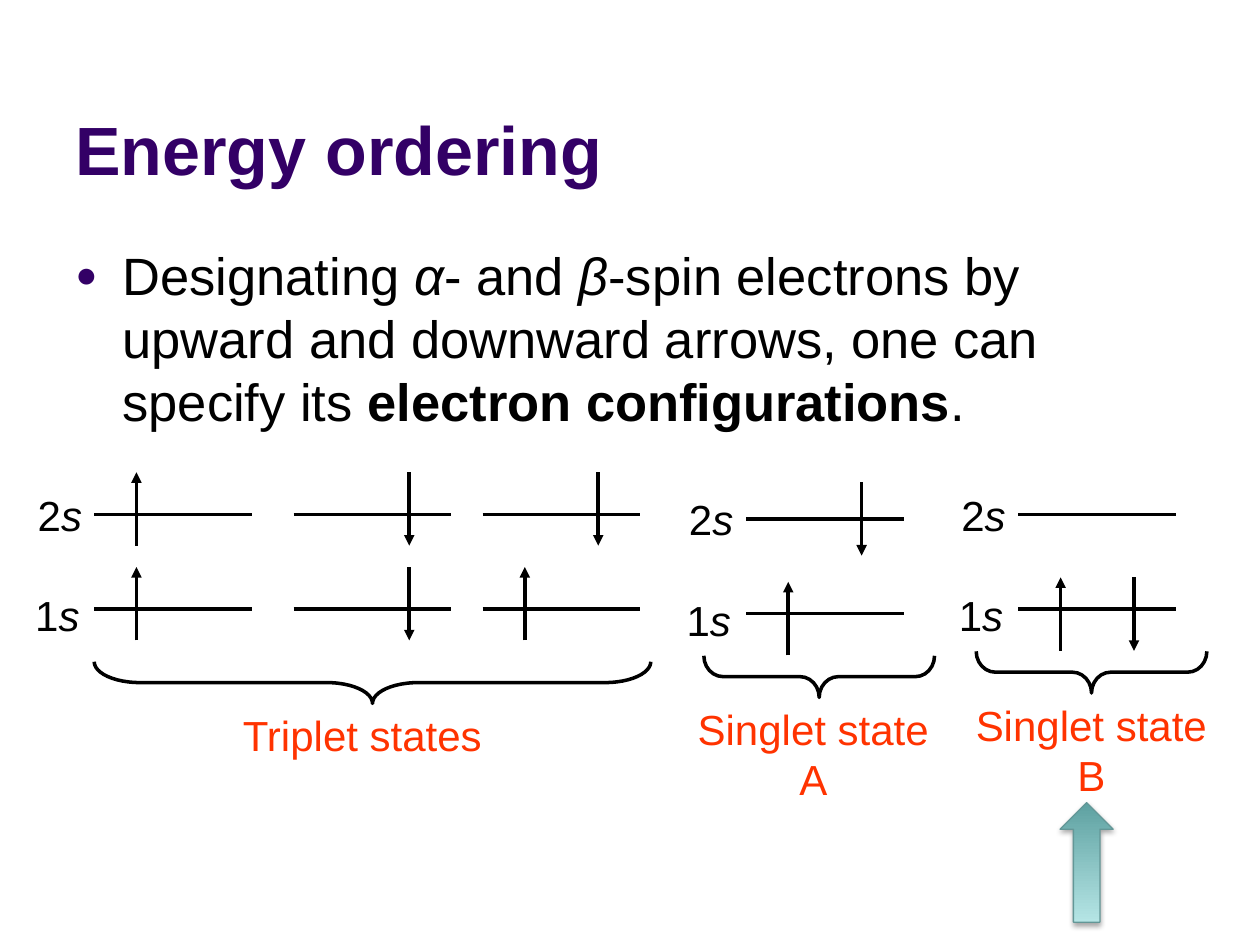
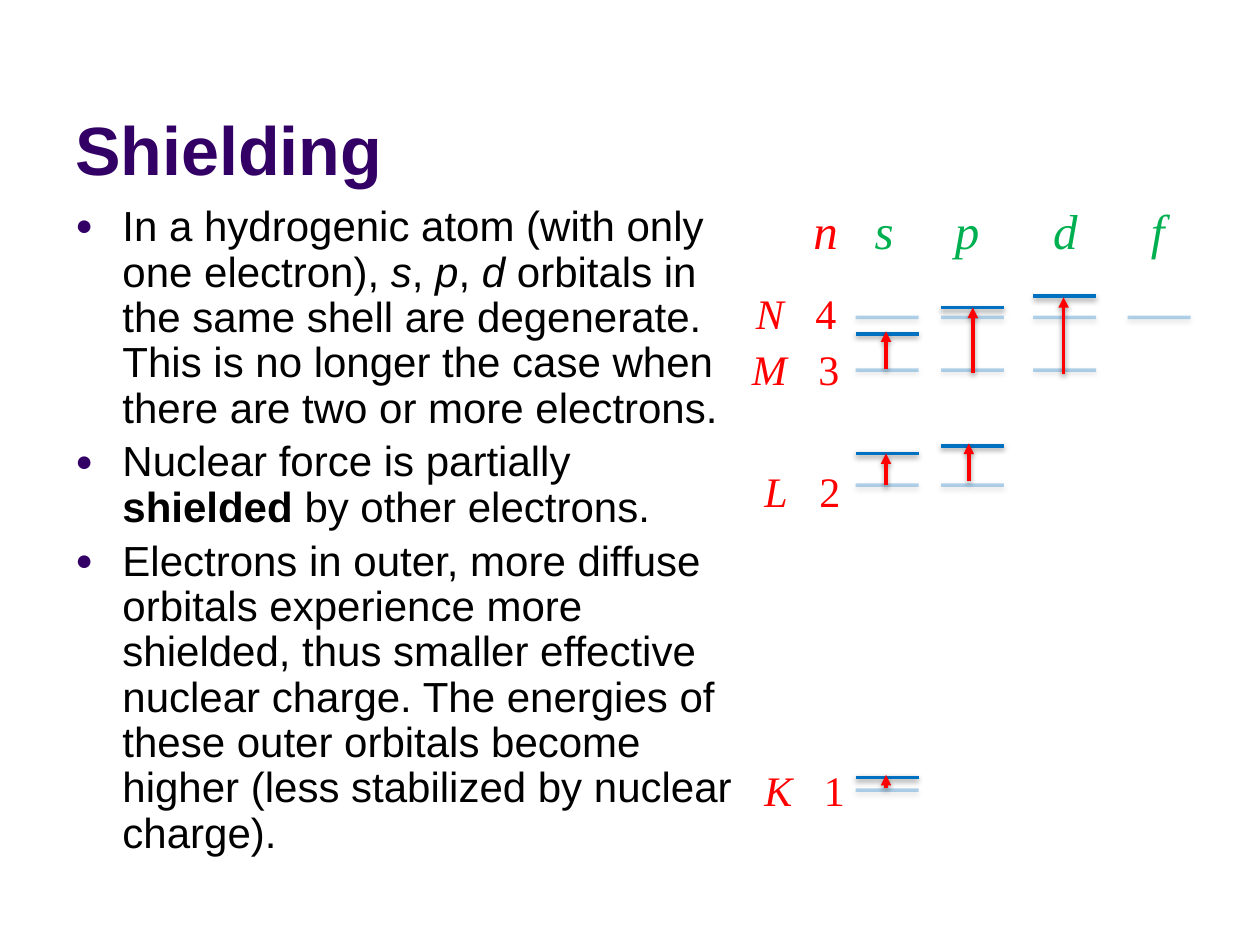
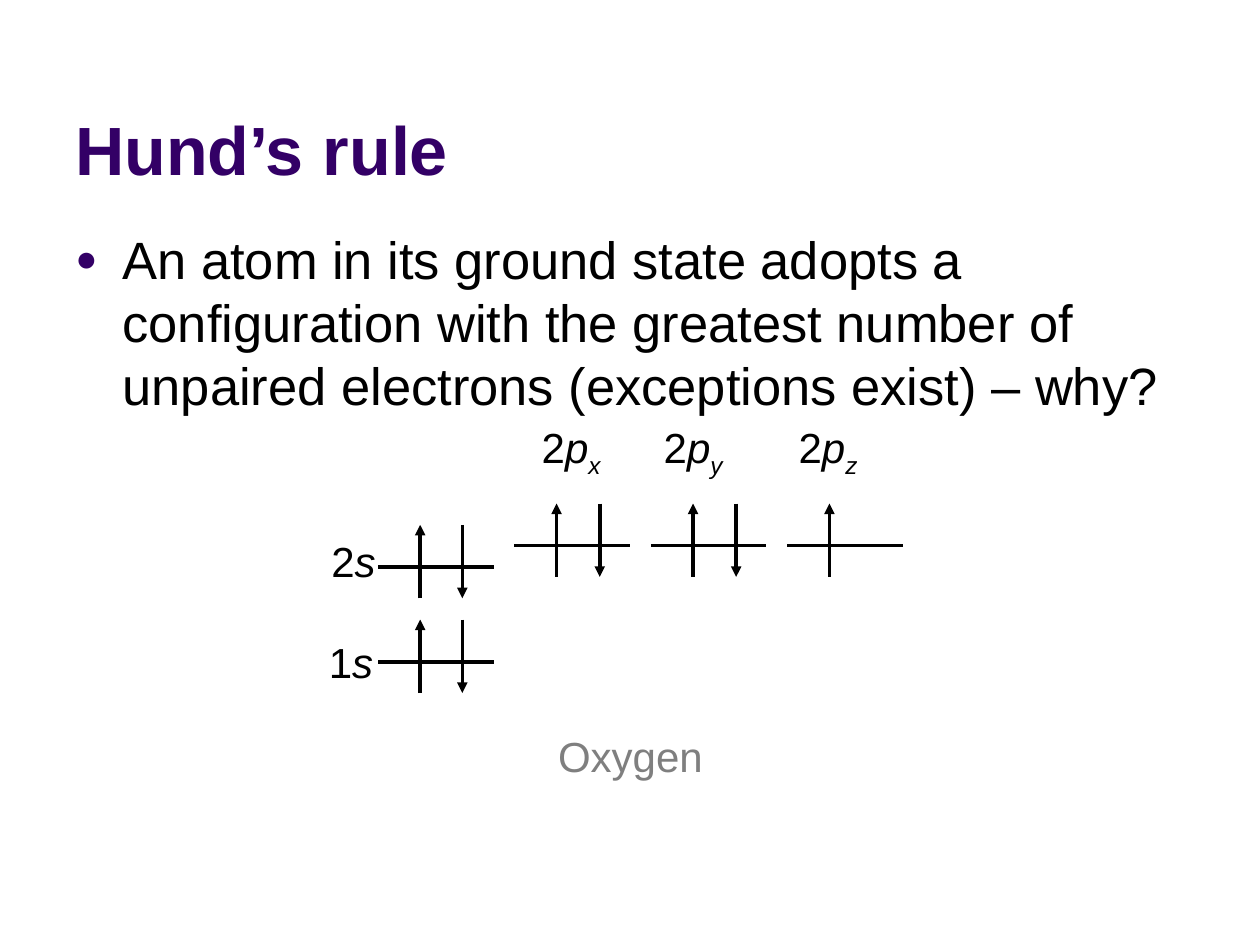
from lxml import etree
from pptx import Presentation
from pptx.dml.color import RGBColor
from pptx.enum import shapes as kinds, text as texts
from pptx.oxml import ns
from pptx.util import Cm, Pt

PURPLE = RGBColor(0x33, 0x00, 0x66)
BLACK = RGBColor(0x00, 0x00, 0x00)
ORANGE = RGBColor(0xFF, 0x33, 0x00)
RED = RGBColor(0xFF, 0x00, 0x00)
GREEN = RGBColor(0x00, 0xB0, 0x50)
BLUE = RGBColor(0x00, 0x70, 0xC0)
GRAY = RGBColor(0x7F, 0x7F, 0x7F)
TEAL = RGBColor(0x5E, 0xA1, 0xA1)
PALE_TEAL = RGBColor(0xB5, 0xE5, 0xE5)
TEAL_EDGE = RGBColor(0x63, 0x97, 0x97)
SANS = "Arial"
SERIF = "Times New Roman"

SPIN_LENGTH = 1.48
UP_OFFSET = 0.85
LEVEL_LENGTH = 3.18
SHELL_Y = {"2s": 10.37, "1s": 12.28}
COLUMNS = {"s": 17.25, "p": 18.97, "d": 20.83, "f": 22.73}


def add_xml(parent, tag, **attributes):
    return etree.SubElement(parent, ns.qn(tag), attributes)


def set_shadow(shape, alpha=None, distance=1.6):
    properties = shape.element.spPr
    for old in properties.findall(ns.qn("a:effectLst")):
        properties.remove(old)
    effects = add_xml(properties, "a:effectLst")
    if alpha:
        shadow = add_xml(effects, "a:outerShdw", blurRad=str(Pt(3.1)),
                         dist=str(Pt(distance)), dir="5400000", rotWithShape="0")
        color = add_xml(shadow, "a:srgbClr", val=str(BLACK))
        add_xml(color, "a:alpha", val=str(alpha * 1000))


def add_line(shapes, start, end, color=BLACK, arrow=False, shadow=None, opacity=None):
    line = shapes.add_connector(kinds.MSO_CONNECTOR.STRAIGHT,
                                *(Cm(value) for value in start + end))
    line.line.color.rgb = color
    line.line.width = Pt(2)
    outline = line.element.spPr.find(ns.qn("a:ln"))
    if opacity:
        add_xml(outline.find(".//" + ns.qn("a:srgbClr")), "a:alpha", val=str(opacity * 1000))
    if arrow:
        add_xml(outline, "a:tailEnd", type="triangle")
    set_shadow(line, shadow)


def add_box(page, left, top, width, height, wrap=True):
    box = page.shapes.add_textbox(Cm(left), Cm(top), Cm(width), Cm(height))
    box.text_frame.word_wrap = wrap
    return box.text_frame


def add_runs(para, runs, size, color=BLACK, font=SANS):
    for text, style in runs:
        span = para.add_run()
        span.text = text
        span.font.name = font
        span.font.size = Pt(size)
        span.font.color.rgb = color
        span.font.bold = "b" in style
        span.font.italic = "i" in style
        if "_" in style:
            span.font._element.set("baseline", "-25000")


def add_title(page, text):
    frame = add_box(page, 1.27, 0.33, 22.86, 3.61)
    frame.vertical_anchor = texts.MSO_ANCHOR.BOTTOM
    add_runs(frame.paragraphs[0], [(text, "b")], 39, PURPLE)


def add_bullets(page, top, width, height, items, size=30, spacing=None):
    frame = add_box(page, 1.27, top, width, height)
    for index, runs in enumerate(items):
        para = frame.add_paragraph() if index else frame.paragraphs[0]
        para.line_spacing = spacing
        para.space_before = Pt(size * 0.2)
        properties = para._p.get_or_add_pPr()
        properties.set("marL", str(Cm(0.95)))
        properties.set("indent", str(Cm(-0.95)))
        add_xml(add_xml(properties, "a:buClr"), "a:srgbClr", val=str(PURPLE))
        add_xml(properties, "a:buSzPct", val="70000")
        add_xml(properties, "a:buFont", typeface=SANS)
        add_xml(properties, "a:buChar", char="●")
        add_runs(para, runs, size)


def add_label(page, left, top, width, runs, color=BLACK):
    frame = add_box(page, left, top, width, 1.27, wrap=False)
    add_runs(frame.paragraphs[0], runs, 24, color)


def add_tabbed_label(page, left, top, width, stops, groups, size):
    frame = add_box(page, left, top, width, 1.27)
    para = frame.paragraphs[0]
    tabs = add_xml(para._p.get_or_add_pPr(), "a:tabLst")
    for stop in stops:
        add_xml(tabs, "a:tab", pos=str(Cm(stop)), algn="l")
    for runs, color in groups:
        add_runs(para, runs, size, color, SERIF)


def add_caption(page, left, top, width, lines):
    frame = add_box(page, left, top, width, 1.27 * len(lines))
    for index, text in enumerate(lines):
        para = frame.add_paragraph() if index else frame.paragraphs[0]
        para.alignment = texts.PP_ALIGN.CENTER
        add_runs(para, [(text, "")], 24, ORANGE)


def add_shell_labels(page, left, top):
    add_label(page, left, top, 1.4, [("1", ""), ("s", "i")])
    add_label(page, left + 0.05, top - 2.02, 1.4, [("2", ""), ("s", "i")])


def add_level(page, left, y, spins, length=LEVEL_LENGTH, down_offset=2.33, rise=0.85):
    add_line(page.shapes, (left, y), (left + length, y))
    top, bottom = y - rise, y - rise + SPIN_LENGTH
    if "↑" in spins:
        x = left + UP_OFFSET
        add_line(page.shapes, (x, bottom), (x, top), arrow=True)
    if "↓" in spins:
        x = left + down_offset
        add_line(page.shapes, (x, top), (x, bottom), arrow=True)


def add_brace(page, left, top, width, curl):
    depth = 0.84
    brace = page.shapes.add_shape(
        kinds.MSO_SHAPE.LEFT_BRACE, Cm(left + (width - depth) / 2),
        Cm(top + (depth - width) / 2), Cm(depth), Cm(width))
    brace.rotation = 270
    brace.adjustments[0] = curl
    brace.adjustments[1] = 0.5
    brace.fill.background()
    brace.line.color.rgb = BLACK
    brace.line.width = Pt(2)
    brace.shadow.inherit = False


def add_pointer(page):
    pointer = page.shapes.add_shape(kinds.MSO_SHAPE.DOWN_ARROW,
                                    Cm(21.37), Cm(16.18), Cm(1.07), Cm(2.41))
    pointer.rotation = 180
    pointer.fill.gradient()
    pointer.fill.gradient_angle = 90
    for stop, color in zip(pointer.fill.gradient_stops, (TEAL, PALE_TEAL)):
        stop.color.rgb = color
    pointer.line.color.rgb = TEAL_EDGE
    pointer.line.width = Pt(0.75)
    set_shadow(pointer, 35, 1.8)


def build_energy_ordering(page):
    add_title(page, "Energy ordering")
    add_bullets(page, 4.78, 22.86, 12.24, [[
        ("Designating ", ""), ("α", "i"), ("- and ", ""), ("β", "i"),
        ("-spin electrons by upward and downward arrows, one can specify its ", ""),
        ("electron configurations", "b"), (".", "")]])
    for left, upper, lower in ((1.9, "↑", "↑"), (5.92, "↓", "↓"), (9.73, "↓", "↑")):
        add_level(page, left, SHELL_Y["2s"], upper)
        add_level(page, left, SHELL_Y["1s"], lower)
    add_shell_labels(page, 0.46, 11.76)
    add_brace(page, 1.9, 13.34, 11.22, 1.1)
    add_caption(page, 3.81, 14.17, 6.99, ["Triplet states"])

    for left, drop, upper, lower in ((20.53, 0, "", "↑↓"), (15.04, 0.09, "↓", "↑")):
        add_level(page, left, SHELL_Y["2s"] + drop, upper, rise=0.74)
        add_level(page, left, SHELL_Y["1s"] + drop, lower, rise=0.64)
        add_shell_labels(page, left - 1.45, 11.76 + drop)
        add_brace(page, left - 0.85, 13.13 + drop, 4.65, 0.46)
    add_caption(page, 19.05, 13.97, 5.9, ["Singlet state B"])
    add_caption(page, 12.9, 14.05, 6.99, ["Singlet state", "A"])
    add_pointer(page)


def build_shielding(page):
    degenerate = page.shapes.add_group_shape().shapes
    for y, orbitals in ((6.4, "spdf"), (7.46, "spd"), (9.78, "sp"), (15.93, "s")):
        for orbital in orbitals:
            x = COLUMNS[orbital]
            add_line(degenerate, (x, y), (x + 1.27, y), BLUE, shadow=38, opacity=30)
    add_bullets(page, 4.02, 14.1, 13.54, [
        [("In a hydrogenic atom (with only one electron), ", ""), ("s", "i"), (", ", ""),
         ("p", "i"), (", ", ""), ("d", "i"),
         (" orbitals in the same shell are degenerate. This is no longer the case when "
          "there are two or more electrons.", "")],
        [("Nuclear force is partially ", ""), ("shielded ", "b"),
         ("by other electrons.", "")],
        [("Electrons in outer, more diffuse orbitals experience more shielded, thus "
          "smaller effective nuclear charge. The energies of these outer orbitals become "
          "higher (less stabilized by nuclear charge).", "")],
    ], size=24, spacing=0.9)
    add_title(page, "Shielding")
    add_tabbed_label(page, 16.15, 3.92, 8, (1.23, 2.85, 4.83, 6.8),
                     [([("n", "i")], RED), ([("\ts\tp\td\tf", "i")], GREEN)], 28)
    for orbital, y in (("d", 5.97), ("s", 6.73), ("p", 6.2),
                       ("s", 9.14), ("p", 8.99), ("s", 15.67)):
        x = COLUMNS[orbital]
        add_line(page.shapes, (x, y), (x + 1.27, y), BLUE, shadow=38)
    for x, bottom, top in ((17.86, 15.88, 15.62), (17.86, 9.78, 9.14),
                           (17.86, 7.44, 6.68), (19.53, 9.7, 8.94),
                           (19.61, 7.52, 6.2), (21.44, 7.54, 5.99)):
        add_line(page.shapes, (x, bottom), (x, top), RED, arrow=True, shadow=38)
    for shell, number, left, top, stop in (
            ("N", "4", 14.99, 5.67, 1.2), ("M", "3", 14.91, 6.81, 1.34),
            ("L", "2", 15.16, 9.25, 1.11), ("K", "1", 15.16, 15.29, 1.2)):
        add_tabbed_label(page, left, top, 2.5, (stop,),
                         [([(shell + "\t", "i"), (number, "")], RED)], 24)


def build_hunds_rule(page):
    add_title(page, "Hund’s rule")
    add_bullets(page, 4.45, 22.86, 12.24, [[
        ("An atom in its ground state adopts a configuration with the greatest number "
         "of unpaired electrons (exceptions exist) – why?", "")]])
    add_label(page, 11, 14.61, 3.43, [("Oxygen", "")], GRAY)
    for y in (13.34, 11.43):
        add_level(page, 7.62, y, "↑↓", length=2.33, down_offset=1.7)
    add_shell_labels(page, 6.38, 12.7)
    for index, (axis, label_left, spins) in enumerate(
            (("x", 10.67, "↑↓"), ("y", 13.13, "↑↓"), ("z", 15.85, "↑"))):
        add_level(page, 10.37 + 2.75 * index, 11, spins, length=2.33, down_offset=1.72)
        add_label(page, label_left, 8.38, 1.75, [("2", ""), ("p", "i"), (axis, "i_")])


def main():
    deck = Presentation()
    deck.slide_width, deck.slide_height = Cm(25.4), Cm(19.05)
    for build in (build_energy_ordering, build_shielding, build_hunds_rule):
        build(deck.slides.add_slide(deck.slide_layouts[6]))
    deck.save("out.pptx")


if __name__ == "__main__":
    main()
